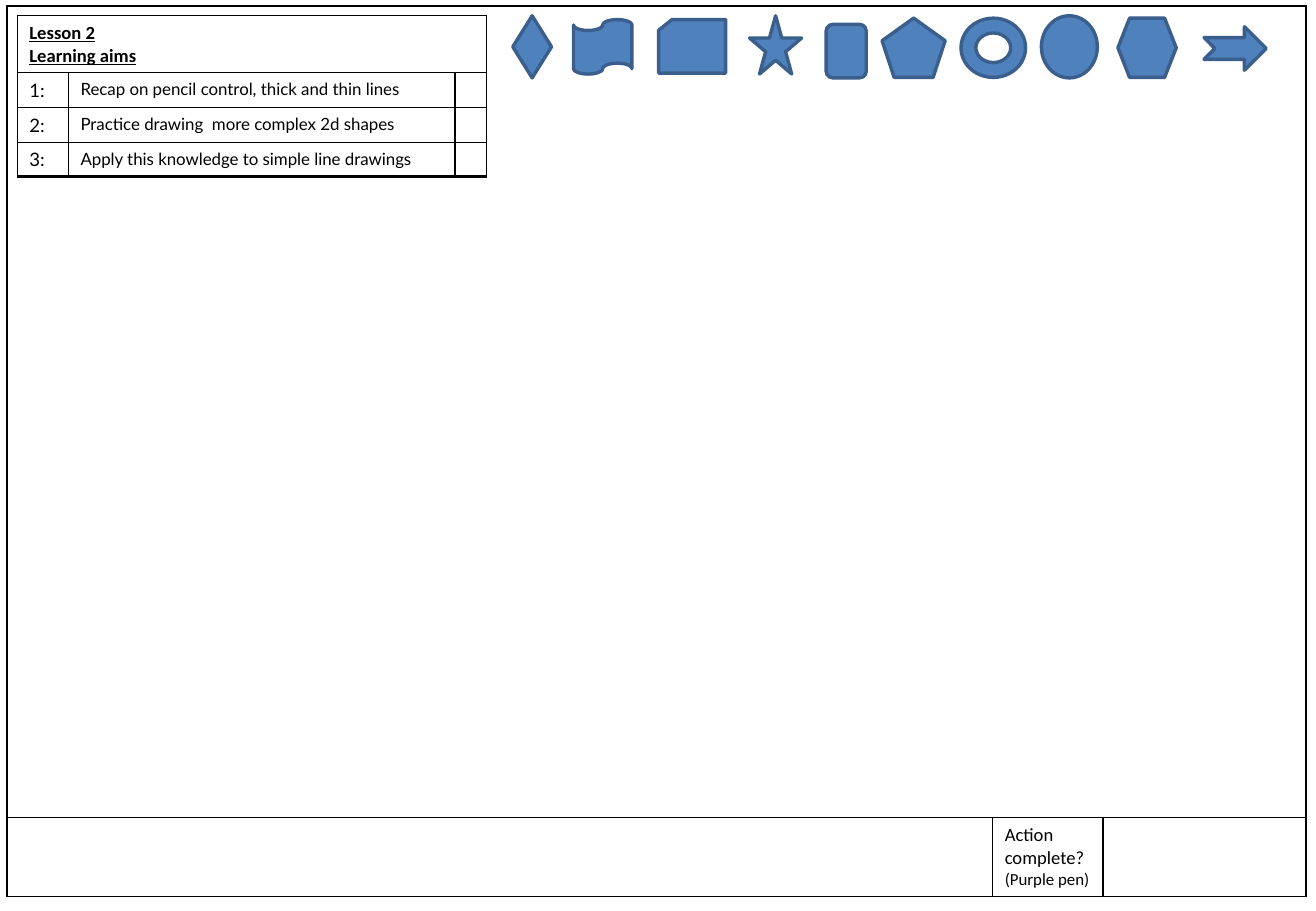
from lxml import etree
from pptx import Presentation
from pptx.dml.color import RGBColor
from pptx.enum.shapes import MSO_SHAPE
from pptx.enum.text import MSO_ANCHOR
from pptx.oxml.ns import qn
from pptx.util import Cm, Pt

BLACK = RGBColor(0x00, 0x00, 0x00)
WHITE = RGBColor(0xFF, 0xFF, 0xFF)
BLUE = RGBColor(0x4F, 0x81, 0xBD)
NAVY = RGBColor(0x3A, 0x5F, 0x8C)
TOP = MSO_ANCHOR.TOP
MIDDLE = MSO_ANCHOR.MIDDLE

AIMS = [
    "Recap on pencil control, thick and thin lines",
    "Practice drawing  more complex 2d shapes",
    "Apply this knowledge to simple line drawings",
]

SHAPES = [
    (MSO_SHAPE.DIAMOND, 10.72, 0.33, 0.81, 1.3),
    (MSO_SHAPE.FLOWCHART_PUNCHED_TAPE, 11.99, 0.41, 1.22, 1.14),
    (MSO_SHAPE.FLOWCHART_CARD, 13.77, 0.41, 1.4, 1.12),
    (MSO_SHAPE.STAR_5_POINT, 15.67, 0.33, 1.09, 1.22),
    (MSO_SHAPE.ROUNDED_RECTANGLE, 17.27, 0.51, 0.84, 1.12),
    (MSO_SHAPE.REGULAR_PENTAGON, 18.44, 0.38, 1.32, 1.24),
    (MSO_SHAPE.DONUT, 20.09, 0.38, 1.35, 1.24),
    (MSO_SHAPE.OVAL, 21.77, 0.33, 1.17, 1.3),
    (MSO_SHAPE.FLOWCHART_PREPARATION, 23.37, 0.38, 1.22, 1.24),
    (MSO_SHAPE.NOTCHED_RIGHT_ARROW, 25.17, 0.56, 1.3, 0.91),
]


def write(para, text, size=11, font="Calibri", bold=False, line=False):
    """Add one formatted run to a paragraph."""
    run = para.add_run()
    run.text = text
    run.font.size = Pt(size)
    run.font.name = font
    run.font.bold = bold
    run.font.underline = line
    run.font.color.rgb = BLACK


class Sheet:
    """Hold the style and the current slide."""

    def __init__(self, slide, edge=1, rim=2):
        """Keep the slide and the line widths."""
        self.slide = slide
        self.edge = edge
        self.rim = rim

    def frame(self, cell):
        """Draw the four borders of a cell."""
        props = cell._tc.get_or_add_tcPr()
        for side in ("a:lnL", "a:lnR", "a:lnT", "a:lnB"):
            line = etree.SubElement(props, qn(side), w=str(Pt(self.edge)))
            fill = etree.SubElement(line, qn("a:solidFill"))
            etree.SubElement(fill, qn("a:srgbClr"), val=str(BLACK))

    def table(self, left, top, cols, rows, fill=None):
        """Add a plain ruled table and return it."""
        box = self.slide.shapes.add_table(
            len(rows), len(cols), Cm(left), Cm(top), Cm(sum(cols)), Cm(sum(rows)))
        grid = box.table
        grid.first_row = grid.horz_banding = False
        for col, width in zip(grid.columns, cols):
            col.width = Cm(width)
        for row, height in zip(grid.rows, rows):
            row.height = Cm(height)
        for cell in grid.iter_cells():
            self.frame(cell)
            if fill is None:
                cell.fill.background()
            else:
                cell.fill.solid()
                cell.fill.fore_color.rgb = fill
            para = cell.text_frame.paragraphs[0]
            etree.SubElement(para._p, qn("a:endParaRPr"), sz="1000")
        return grid

    def fill(self, cell, lines, anchor=TOP, **style):
        """Write pairs of text and size as the paragraphs of a cell."""
        cell.vertical_anchor = anchor
        frame = cell.text_frame
        for i, (text, size) in enumerate(lines):
            para = frame.add_paragraph() if i else frame.paragraphs[0]
            write(para, text, size=size, **style)

    def shape(self, kind, left, top, width, height):
        """Add a blue preset shape."""
        item = self.slide.shapes.add_shape(
            kind, Cm(left), Cm(top), Cm(width), Cm(height))
        item.shadow.inherit = False
        item.fill.solid()
        item.fill.fore_color.rgb = BLUE
        item.line.color.rgb = NAVY
        item.line.width = Pt(self.rim)


def main():
    """Build the lesson sheet."""
    deck = Presentation()
    deck.slide_width = Cm(27.51)
    deck.slide_height = Cm(19.05)
    sheet = Sheet(deck.slides.add_slide(deck.slide_layouts[6]))

    page = sheet.table(0.15, 0.13, [20.6, 2.31, 4.24], [16.97, 1.65])
    page.cell(0, 0).merge(page.cell(0, 2))
    sheet.fill(page.cell(1, 1), [("Action complete?", 11), ("(Purple pen)", 10)],
               anchor=MIDDLE)

    head = sheet.table(0.36, 0.33, [9.81], [3.35], fill=WHITE)
    sheet.fill(head.cell(0, 0), [("Lesson 2", 11), ("Learning aims", 11)],
               bold=True, line=True)

    aims = sheet.table(0.36, 1.52, [1.07, 8.08, 0.66], [0.73] * len(AIMS))
    for i, aim in enumerate(AIMS):
        sheet.fill(aims.cell(i, 0), [(f"{i + 1}:", 11)], font="Lato")
        sheet.fill(aims.cell(i, 1), [(aim, 10)], font="Lato")

    for spec in SHAPES:
        sheet.shape(*spec)

    deck.save("out.pptx")


if __name__ == "__main__":
    main()
